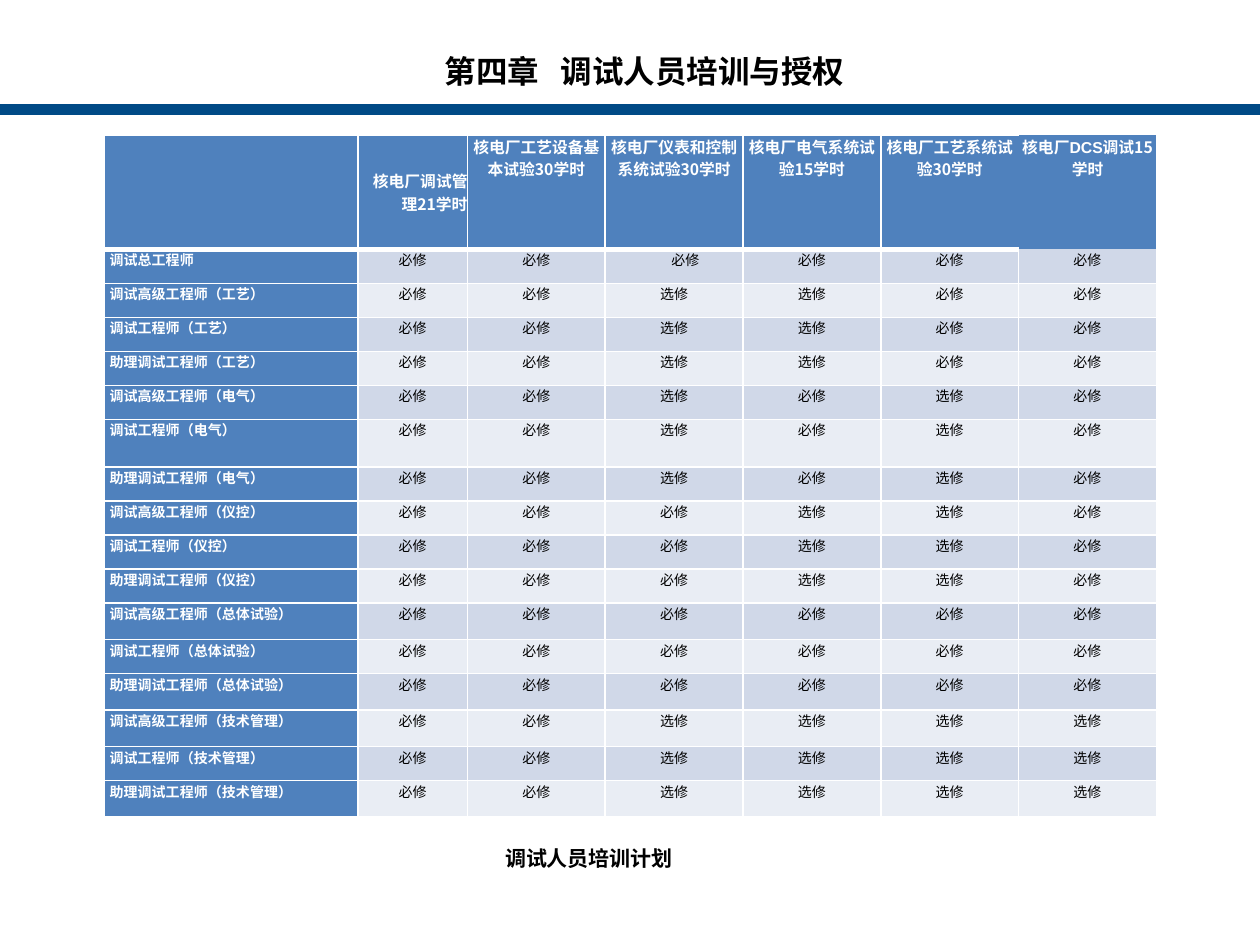
from lxml.etree import SubElement
from pptx import Presentation
from pptx.dml.color import RGBColor
from pptx.enum.shapes import MSO_SHAPE
from pptx.enum.text import MSO_ANCHOR, PP_ALIGN
from pptx.oxml.ns import qn
from pptx.util import Inches, Pt

WHITE = RGBColor(0xFF, 0xFF, 0xFF)
BLACK = RGBColor(0, 0, 0)
NAVY = RGBColor(0x00, 0x4A, 0x86)
BLUE = RGBColor(0x4F, 0x81, 0xBD)
BANDS = RGBColor(0xD0, 0xD8, 0xE8), RGBColor(0xE9, 0xED, 0xF4)
CJK = "Noto Sans CJK SC"

COURSES = [
    [],
    [("核电厂调试管理21学时", CJK)],
    [("核电厂工艺设备基本试验30学时", CJK)],
    [("核电厂仪表和控制系统试验30学时", CJK)],
    [("核电厂电气系统试验15学时", CJK)],
    [("核电厂工艺系统试验30学时", CJK)],
    [("核电厂", CJK), ("DCS", "Arial"), ("调试15学时", CJK)],
]
GRADES = ["调试高级工程师", "调试工程师", "助理调试工程师"]
# 必 = 必修, 选 = 选修, one mark per course
FIELDS = {
    "工艺": "必必选选必必",
    "电气": "必必选必选必",
    "仪控": "必必必选选必",
    "总体试验": "必必必必必必",
    "技术管理": "必必选选选选",
}
STAFF = [("调试总工程师", "必必必必必必")] + [
    (f"{grade}（{field}）", marks) for field, marks in FIELDS.items() for grade in GRADES
]
HEADER_H, ROW_H = 0.91, 0.27
TALL_ROWS = {6: 0.38, 11: 0.29, 13: 0.29, 14: 0.29, 16: 0.29}


def add_run(p, text, size, color, bold=False, font="Calibri"):
    r = p.add_run()
    r.text = text
    r.font.size, r.font.bold, r.font.name = Pt(size), bold, font
    r.font.color.rgb = color
    SubElement(r.font._element, qn("a:ea"), typeface=CJK)


def set_borders(cell, widths):
    """Draw white borders; widths are points for left, right, top, bottom, 0 for none."""
    tcPr = cell._tc.get_or_add_tcPr()
    for side, width in zip("LRTB", widths):
        ln = SubElement(tcPr, qn(f"a:ln{side}"), w=str(Pt(width)))
        if width:
            fill = SubElement(ln, qn("a:solidFill"))
            SubElement(fill, qn("a:srgbClr"), val=str(WHITE))
        else:
            SubElement(ln, qn("a:noFill"))


def format_cell(cell, fill, borders, align, side_margin=0):
    set_borders(cell, borders)
    cell.fill.solid()
    cell.fill.fore_color.rgb = fill
    cell.margin_left = cell.margin_right = Inches(side_margin)
    cell.margin_top = cell.margin_bottom = 0
    p = cell.text_frame.paragraphs[0]
    p.alignment = align
    return p


def add_title(s, x, y, w, h):
    title = s.shapes.title
    title.left, title.top, title.width, title.height = map(Inches, (x, y, w, h))
    tf = title.text_frame
    tf.word_wrap = False
    tf.vertical_anchor = MSO_ANCHOR.MIDDLE
    p = tf.paragraphs[0]
    p.alignment = PP_ALIGN.LEFT
    tabs = SubElement(p._p.get_or_add_pPr(), qn("a:tabLst"))
    SubElement(tabs, qn("a:tab"), pos=str(Inches(0.92)), algn="l")
    add_run(p, "第四章\t调试人员培训与授权", 18, BLACK, True)


def add_rule(s, x, y, w, h):
    bar = s.shapes.add_shape(MSO_SHAPE.RECTANGLE, *map(Inches, (x, y, w, h)))
    bar.shadow.inherit = False
    bar.fill.solid()
    bar.fill.fore_color.rgb = bar.line.color.rgb = NAVY
    bar.line.width = Pt(2)


def add_training_table(s, x, y, w, h):
    n_rows, n_cols = len(STAFF) + 1, len(COURSES)
    box = map(Inches, (x, y, w, h))
    table = s.shapes.add_table(n_rows, n_cols, *box).table
    table.first_row = table.horz_banding = False

    first_widths = [2.01, 0.87]
    rest = (w - sum(first_widths)) / (n_cols - 2)
    for col, width in zip(table.columns, first_widths + [rest] * (n_cols - 2)):
        col.width = Inches(width)
    for i, row in enumerate(table.rows):
        row.height = Inches(TALL_ROWS.get(i, ROW_H) if i else HEADER_H)

    last = n_cols - 1
    for j, parts in enumerate(COURSES):
        borders = (1, int(j < last - 1), 1, 3) if j < last else (0, 0, 0, 0)
        cell = table.cell(0, j)
        p = format_cell(cell, BLUE, borders, PP_ALIGN.RIGHT if j == 1 else PP_ALIGN.CENTER)
        if j == 1:
            cell.vertical_anchor = MSO_ANCHOR.MIDDLE
        for text, font in parts:
            add_run(p, text, 9, WHITE, True, font)

    for i, (post, marks) in enumerate(STAFF, 1):
        top = 3 if i == 1 else 1
        p = format_cell(table.cell(i, 0), BLUE, (1, 1, top, 1), PP_ALIGN.LEFT, 0.04)
        add_run(p, post, 8, WHITE, True)
        for j, mark in enumerate(marks, 1):
            cell_top = 0 if (i, j) == (1, last) else top
            p = format_cell(table.cell(i, j), BANDS[(i - 1) % 2],
                            (1, 1, cell_top, 1), PP_ALIGN.CENTER)
            add_run(p, mark + "修", 8, BLACK)
    # The chief engineer's instrumentation mark sits right of centre
    table.cell(1, 3).margin_left = Inches(0.18)


def add_caption(s, x, y, w, h):
    tf = s.shapes.add_textbox(*map(Inches, (x, y, w, h))).text_frame
    tf.word_wrap = False
    p = tf.paragraphs[0]
    p.alignment = PP_ALIGN.CENTER
    add_run(p, "调试人员培训计划", 12, BLACK, True)


def main():
    prs = Presentation()
    prs.slide_width, prs.slide_height = Inches(10), Inches(7.5)
    s = prs.slides.add_slide(prs.slide_layouts[5])
    add_rule(s, 0, 0.84, 10, 0.06)
    add_training_table(s, 0.83, 1.07, 8.35, 5.43)
    add_title(s, 3.43, 0.36, 3.43, 0.4)
    add_caption(s, 3.9, 6.66, 1.55, 0.3)
    prs.save("out.pptx")


if __name__ == "__main__":
    main()
